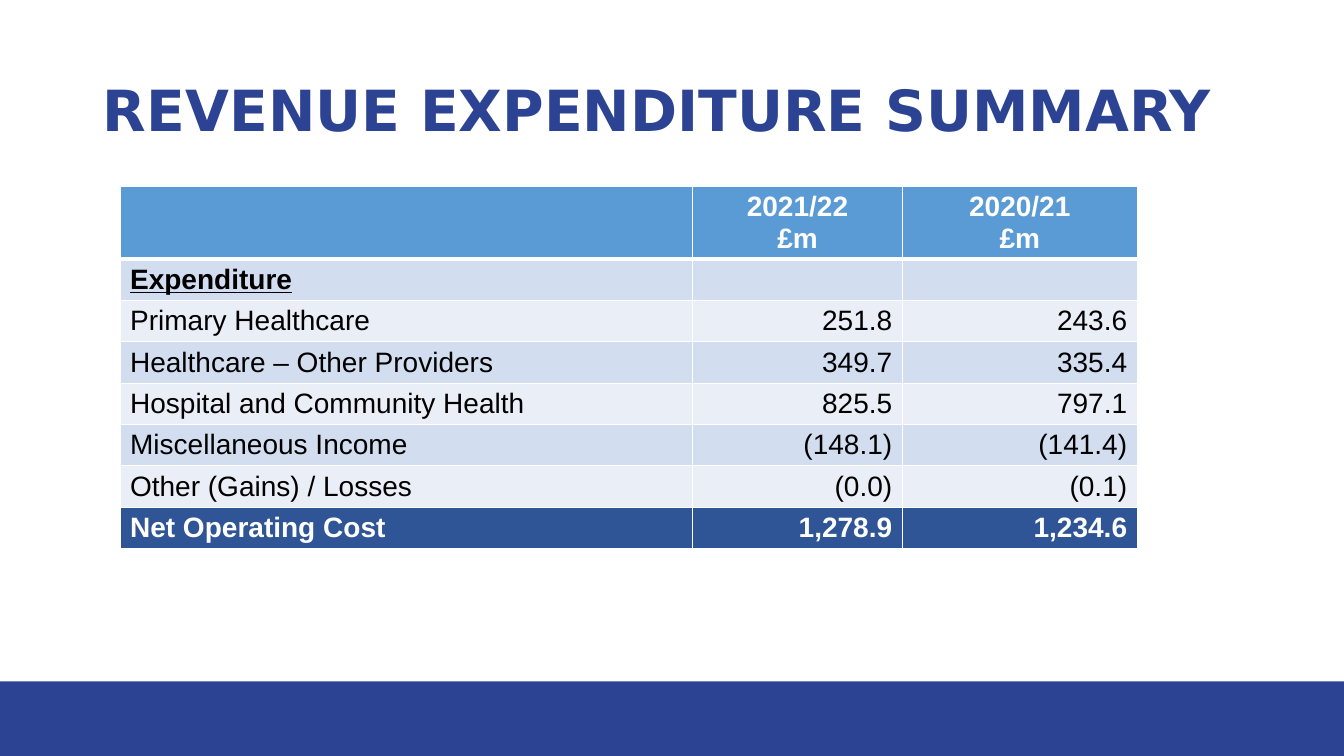
from dataclasses import dataclass

from lxml.etree import SubElement
from pptx import Presentation
from pptx.dml.color import RGBColor
from pptx.enum.shapes import MSO_SHAPE
from pptx.enum.text import MSO_ANCHOR, MSO_AUTO_SIZE, PP_ALIGN as Align
from pptx.oxml.ns import qn
from pptx.util import Emu, Pt

EMU_PER_PX = 9144  # 100 px to the inch


@dataclass(frozen=True)
class Theme:
    navy: str = "2C4393"
    white: str = "FFFFFF"
    black: str = "000000"
    header_fill: str = "5B9BD5"
    band_fills: tuple[str, str] = ("D2DEEF", "EAEFF7")
    total_fill: str = "2F5597"
    title_font: str = "DejaVu Sans"
    table_font: str = "Arial"
    title_size: float = 40.5
    table_size: float = 20
    thin_border: float = 1
    thick_border: float = 3


THEME = Theme()


@dataclass(frozen=True)
class Row:
    label: str
    this_year: str = ""
    last_year: str = ""
    fill: str = ""
    color: str = THEME.black
    bold: bool = False
    underline: bool = False
    figure_align: Align = Align.RIGHT


HEADER = Row("", "2021/22\n£m", "2020/21\n£m", THEME.header_fill, THEME.white,
             bold=True, figure_align=Align.CENTER)
BODY = [
    Row("Expenditure", bold=True, underline=True),
    Row("Primary Healthcare", "251.8", "243.6"),
    Row("Healthcare – Other Providers", "349.7", "335.4"),
    Row("Hospital and Community Health", "825.5", "797.1"),
    Row("Miscellaneous Income", "(148.1)", "(141.4)"),
    Row("Other (Gains) / Losses", "(0.0)", "(0.1)"),
]
TOTAL = Row("Net Operating Cost", "1,278.9", "1,234.6", THEME.total_fill,
            THEME.white, bold=True)
ROWS = [HEADER, *BODY, TOTAL]
COLUMN_WIDTHS = [568, 208, 233]
HEADER_HEIGHT, ROW_HEIGHT = 71, 41


def px(length: int) -> Emu:
    return Emu(length * EMU_PER_PX)


def rgb(color: str) -> RGBColor:
    return RGBColor.from_string(color)


def format_font(font, color: str, **values) -> None:
    font.color.rgb = rgb(color)
    for name, value in values.items():
        setattr(font, name, value)


def set_borders(cell, top: float, bottom: float) -> None:
    """Draw white cell borders; the widths are in points."""
    properties = cell._tc.get_or_add_tcPr()
    widths = {"a:lnL": THEME.thin_border, "a:lnR": THEME.thin_border,
              "a:lnT": top, "a:lnB": bottom}
    for tag, width in widths.items():
        line = SubElement(properties, qn(tag), w=str(Pt(width)))
        fill = SubElement(line, qn("a:solidFill"))
        SubElement(fill, qn("a:srgbClr"), val=THEME.white)


def add_title(page, text: str) -> None:
    title = page.shapes.title
    title.left, title.top, title.width, title.height = map(px, (92, 40, 1150, 145))
    frame = title.text_frame
    frame.text = text
    frame.auto_size = MSO_AUTO_SIZE.NONE
    frame.vertical_anchor = MSO_ANCHOR.MIDDLE
    para = frame.paragraphs[0]
    para.alignment = Align.LEFT
    para.line_spacing = 0.9
    format_font(para.runs[0].font, THEME.navy, name=THEME.title_font,
                size=Pt(THEME.title_size), bold=True)


def add_footer_band(page) -> None:
    band = page.shapes.add_shape(MSO_SHAPE.RECTANGLE, *map(px, (0, 676, 1333, 74)))
    band.shadow.inherit = False
    band.fill.solid()
    band.fill.fore_color.rgb = rgb(THEME.navy)
    band.line.fill.background()


def fill_cell(cell, text: str, row: Row, fill: str, alignment: Align) -> None:
    cell.fill.solid()
    cell.fill.fore_color.rgb = rgb(fill)
    cell.text = text
    for para in cell.text_frame.paragraphs:
        para.alignment = alignment
        for span in para.runs:
            format_font(span.font, row.color, name=THEME.table_font,
                        size=Pt(THEME.table_size), bold=row.bold,
                        underline=row.underline)


def add_summary_table(page) -> None:
    heights = [HEADER_HEIGHT] + [ROW_HEIGHT] * (len(ROWS) - 1)
    frame = page.shapes.add_table(len(ROWS), len(COLUMN_WIDTHS), px(119), px(185),
                                  px(sum(COLUMN_WIDTHS)), px(sum(heights)))
    table = frame.table
    table.first_row = table.horz_banding = False
    for column, width in zip(table.columns, COLUMN_WIDTHS):
        column.width = px(width)
    for index, (row, height) in enumerate(zip(ROWS, heights)):
        table.rows[index].height = px(height)
        fill = row.fill or THEME.band_fills[(index - 1) % 2]
        top = THEME.thick_border if index == 1 else THEME.thin_border
        bottom = THEME.thick_border if index == 0 else THEME.thin_border
        texts = (row.label, row.this_year, row.last_year)
        for column, text in enumerate(texts):
            cell = table.cell(index, column)
            set_borders(cell, top, bottom)
            fill_cell(cell, text, row, fill,
                      row.figure_align if column else Align.LEFT)


def main() -> None:
    deck = Presentation()
    deck.slide_width, deck.slide_height = px(1333), px(750)
    page = deck.slides.add_slide(deck.slide_layouts.get_by_name("Title Only"))
    add_footer_band(page)
    add_title(page, "REVENUE EXPENDITURE SUMMARY")
    add_summary_table(page)
    deck.save("out.pptx")


if __name__ == "__main__":
    main()
